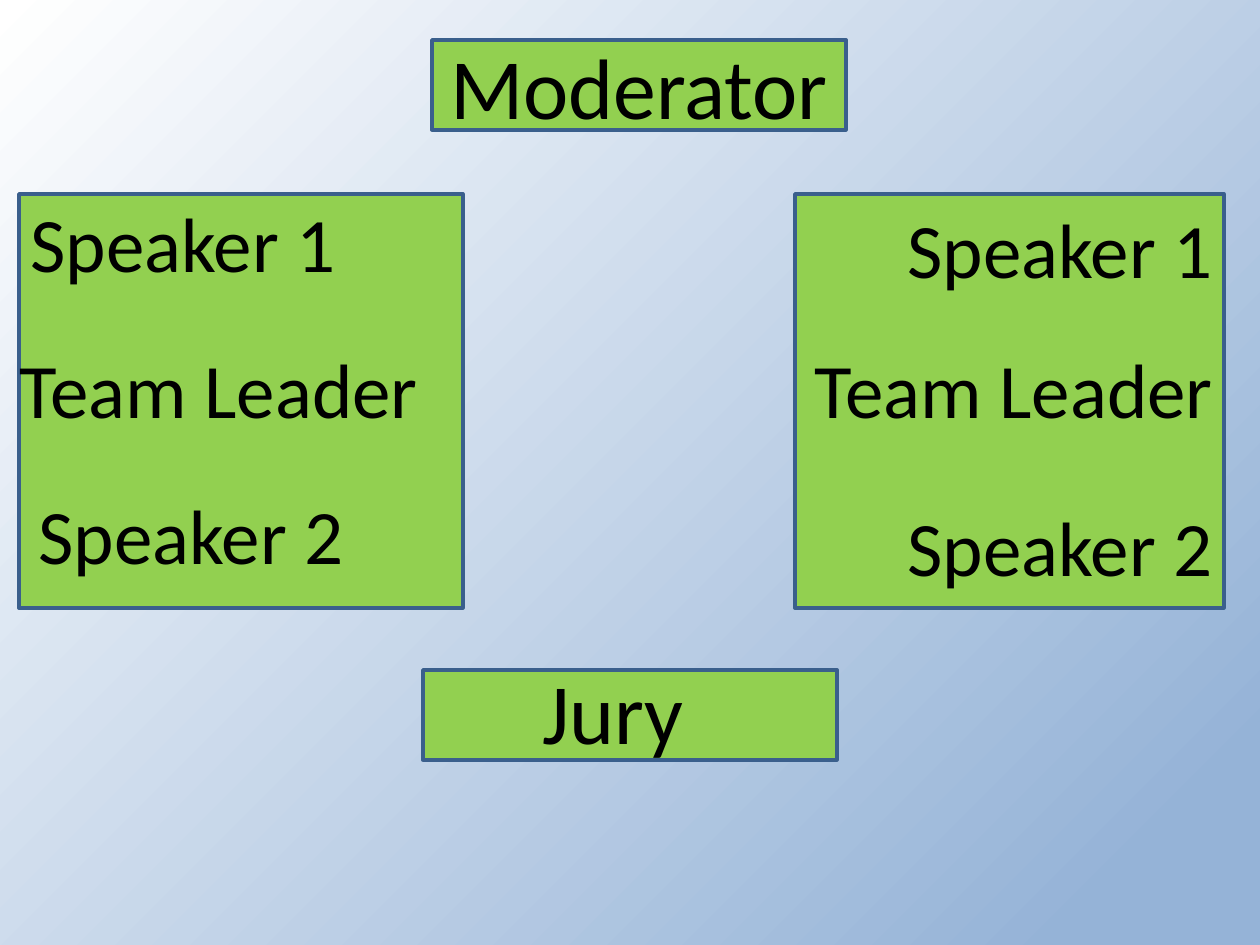
from lxml import etree
from pptx import Presentation
from pptx import util as u
from pptx.dml.color import RGBColor
from pptx.enum import shapes, text
from pptx.oxml import ns

GREEN = RGBColor(0x92, 0xD0, 0x50)
OUTLINE = RGBColor(0x3A, 0x5F, 0x8C)
BLACK = RGBColor(0, 0, 0)
SKY = RGBColor(0x95, 0xB3, 0xD7)
WHITE = RGBColor(0xFF, 0xFF, 0xFF)


def px(*lengths):
    """Turn pixels, 126 to the inch, into EMU."""
    return [round(length * u.Inches(1) / 126) for length in lengths]


prs = Presentation()
prs.slide_width, prs.slide_height = px(1260, 945)
slide = prs.slides.add_slide(prs.slide_layouts[6])

# Background: blue in the lower right corner, fading to white
backdrop = slide.background.fill
backdrop.gradient()
for stop, position, color in zip(backdrop.gradient_stops, (0.09, 1), (SKY, WHITE)):
    stop.position = position
    stop.color.rgb = color
gradient = slide.background._cSld.find(".//" + ns.qn("a:gradFill"))
gradient.remove(gradient.find(ns.qn("a:lin")))
fade = etree.SubElement(gradient, ns.qn("a:path"))
fade.set("path", "circle")
etree.SubElement(fade, ns.qn("a:fillToRect"), l="100000", t="100000")
etree.SubElement(gradient, ns.qn("a:tileRect"), r="-100000", b="-100000")

# Tables: left team, right team, moderator, jury
for area in (
    (19, 194, 444, 414),
    (795, 194, 429, 414),
    (432, 40, 414, 90),
    (423, 670, 414, 90),
):
    desk = slide.shapes.add_shape(shapes.MSO_SHAPE.RECTANGLE, *px(*area))
    desk.shadow.inherit = False
    desk.fill.solid()
    desk.fill.fore_color.rgb = GREEN
    desk.line.color.rgb = OUTLINE
    desk.line.width = u.Pt(2)

# Seats: role, left, top, width, height, text size
for role, left, top, width, height, size in (
    ("Jury", 527, 653, 172, 116, 49),
    ("Moderator", 437, 28, 404, 116, 49),
    ("Speaker 1", 16, 189, 334, 105, 44),
    ("Speaker 1", 893, 195, 334, 105, 44),
    ("Team Leader", 3, 335, 432, 105, 44),
    ("Speaker 2", 24, 481, 334, 105, 44),
    ("Team Leader", 798, 335, 432, 105, 44),
    ("Speaker 2", 893, 493, 334, 105, 44),
):
    seat = slide.shapes.add_textbox(*px(left, top, width, height)).text_frame
    seat.margin_left = seat.margin_right = u.Inches(0.09)
    seat.word_wrap = False
    seat.auto_size = text.MSO_AUTO_SIZE.SHAPE_TO_FIT_TEXT
    line = seat.paragraphs[0]
    line.alignment = text.PP_ALIGN.CENTER
    run = line.add_run()
    run.text = role
    run.font.name = "Calibri"
    run.font.size = u.Pt(size)
    run.font.color.rgb = BLACK

prs.save("out.pptx")
